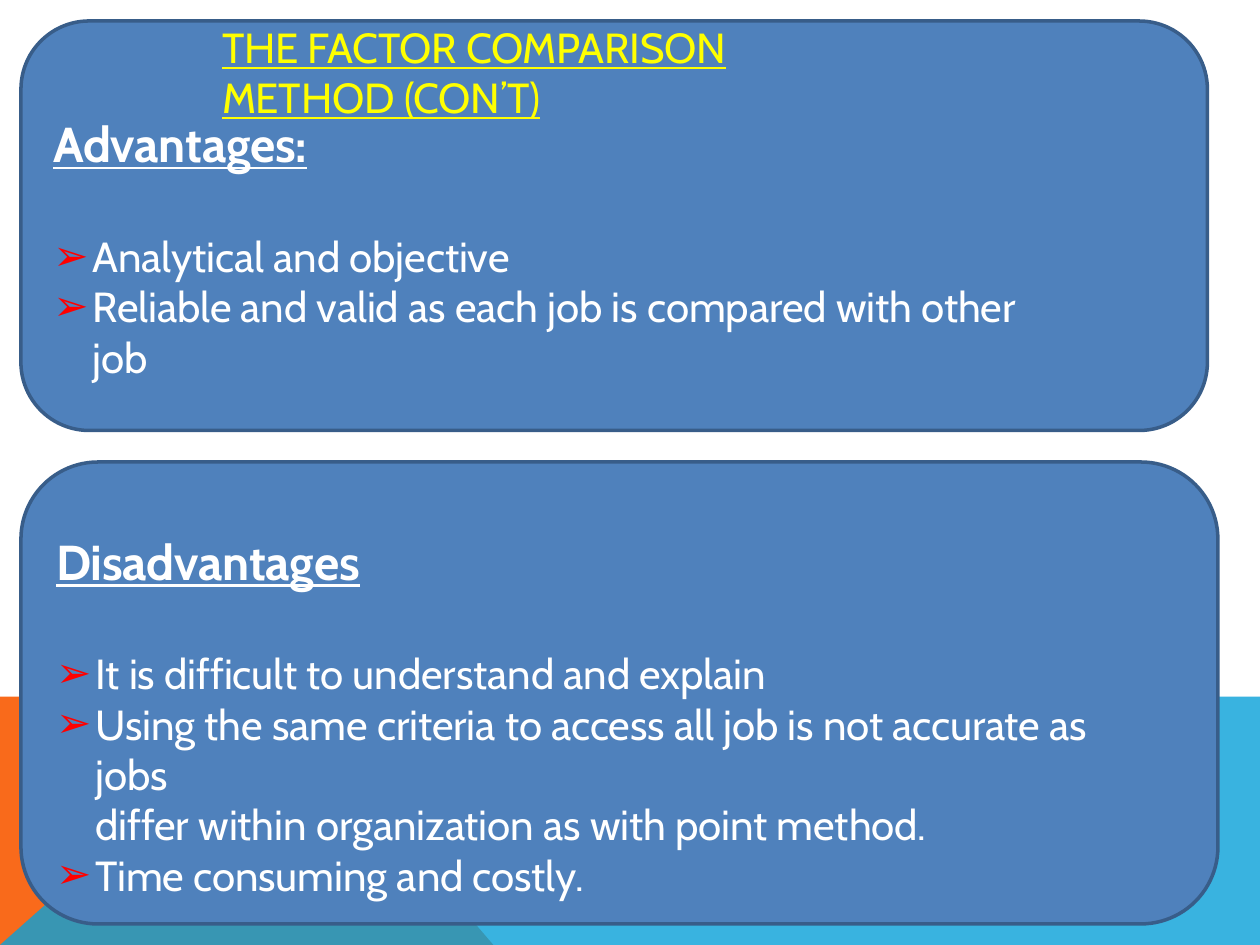
import pptx
import pptx.dml.color
import pptx.enum.shapes
import pptx.enum.text
import pptx.oxml.ns
import pptx.util
from lxml import etree

Pt = pptx.util.Pt
WIDTH, HEIGHT = 720, 540
BAND_TOP = 397.5
FONT = "Cabin"


def color(value):
    """Turn a hex string into a colour."""
    return pptx.dml.color.RGBColor.from_string(value)


def add_element(parent, tag, **attributes):
    """Append a DrawingML child element."""
    return etree.SubElement(parent, pptx.oxml.ns.qn(tag), attributes)


def add_band(page, points, fill, opacity=100):
    """Draw a flat polygon at the foot of the page."""
    builder = page.shapes.build_freeform(*points[0], scale=12700.0)
    builder.add_line_segments(points[1:], close=True)
    band = builder.convert_to_shape()
    band.shadow.inherit = False
    band.fill.solid()
    band.fill.fore_color.rgb = color(fill)
    band.line.fill.background()
    if opacity < 100:
        tint = band.element.spPr.find(".//" + pptx.oxml.ns.qn("a:srgbClr"))
        add_element(tint, "a:alpha", val=str(opacity * 1000))


def add_panel(page, left, top, width, height):
    """Draw a blue rounded panel."""
    kind = pptx.enum.shapes.MSO_SHAPE.ROUNDED_RECTANGLE
    panel = page.shapes.add_shape(kind, Pt(left), Pt(top), Pt(width), Pt(height))
    panel.shadow.inherit = False
    panel.fill.solid()
    panel.fill.fore_color.rgb = color("4F81BC")
    panel.line.color.rgb = color("385D89")
    panel.line.width = Pt(2)


def place(box, left, top, width, height, anchor):
    """Move a placeholder to the front and set its frame."""
    box.left, box.top, box.width, box.height = map(Pt, (left, top, width, height))
    box.element.getparent().append(box.element)
    frame = box.text_frame
    frame.margin_left = frame.margin_right = frame.margin_bottom = 0
    frame.margin_top = Pt(1)
    frame.word_wrap = True
    frame.vertical_anchor = anchor
    frame.auto_size = pptx.enum.text.MSO_AUTO_SIZE.SHAPE_TO_FIT_TEXT


def write(para, text, size=24, ink="FFFFFF", bold=False, underline=False,
          before=0, margin=1, hanging=0, bullet=None, tracking=-0.1):
    """Fill a paragraph with formatted text."""
    para.alignment = pptx.enum.text.PP_ALIGN.LEFT
    para.space_before = Pt(before)
    para.line_spacing = 1.0
    layout = para._p.get_or_add_pPr()
    layout.set("marL", str(Pt(margin)))
    layout.set("indent", str(-Pt(hanging)))
    if bullet:
        add_element(add_element(layout, "a:buClr"), "a:srgbClr", val="FF0000")
        add_element(layout, "a:buChar", char=bullet)
    else:
        add_element(layout, "a:buNone")
    span = para.add_run()
    span.text = text
    span.font.name = FONT
    span.font.size = Pt(size)
    span.font.bold = bold
    span.font.underline = underline
    span.font.color.rgb = color(ink)
    span.font._element.set("spc", str(round(tracking * 100)))


def fill_list(box, heading, items):
    """Write a heading and its items, each a (text, bullet) pair."""
    frame = box.text_frame
    write(frame.paragraphs[0], heading, size=28, bold=True, underline=True, before=1)
    for number, (text, bullet) in enumerate(items):
        write(frame.add_paragraph(), text, before=0 if number else 33, margin=23.5,
              hanging=22.5 if bullet else 0, bullet=bullet, tracking=-0.05)


def main():
    """Build the slide."""
    deck = pptx.Presentation()
    deck.slide_width, deck.slide_height = Pt(WIDTH), Pt(HEIGHT)
    page = deck.slides.add_slide(deck.slide_layouts.get_by_name("Two Content"))
    title, advantages, disadvantages = page.placeholders
    anchors = pptx.enum.text.MSO_ANCHOR

    add_band(page, [(0, HEIGHT), (0, BAND_TOP), (160.5, BAND_TOP), (281.5, HEIGHT)],
             "F96A1B")
    add_band(page, [(0, HEIGHT), (160.5, BAND_TOP), (WIDTH, BAND_TOP), (WIDTH, HEIGHT)],
             "08A1D9", opacity=80)
    add_panel(page, 12, 12, 678, 234)
    add_panel(page, 12, 264, 684, 264)

    place(advantages, 29.5, 64, 577.5, 127.5, anchors.TOP)
    fill_list(advantages, "Advantages:", [
        ("Analytical and objective", "➢"),
        ("Reliable and valid as each job is compared with other job", "➢"),
    ])
    place(disadvantages, 31, 302.5, 631.5, 214, anchors.TOP)
    fill_list(disadvantages, "Disadvantages", [
        ("It is difficult to understand and explain", "➢"),
        ("Using the same criteria to access all job is not accurate as jobs", "➢"),
        ("differ within organization as with point method.", None),
        ("Time consuming and costly.", "➢"),
    ])
    place(title, 126, 25, 386.5, 31, anchors.MIDDLE)
    write(title.text_frame.paragraphs[0], "THE FACTOR COMPARISON METHOD (CON’T)",
          ink="FFFF00", underline=True, before=1)
    deck.save("out.pptx")


if __name__ == "__main__":
    main()
